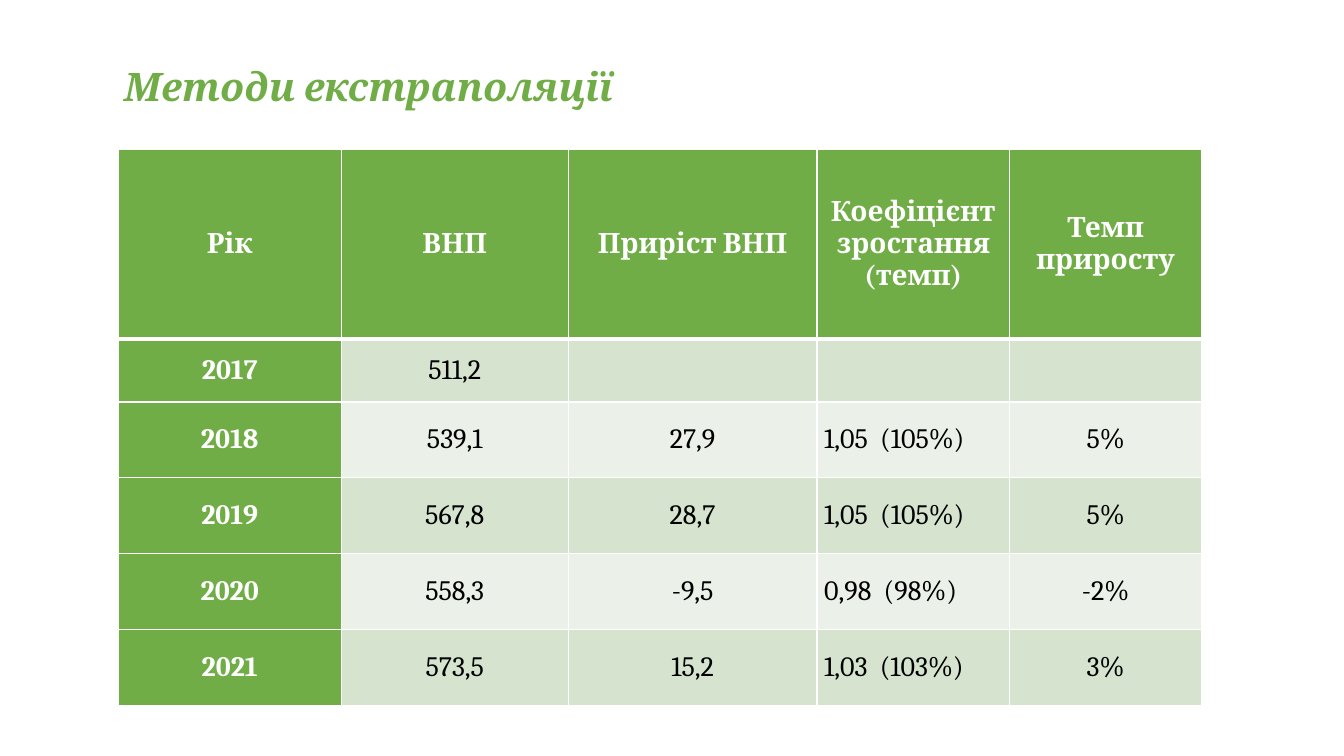
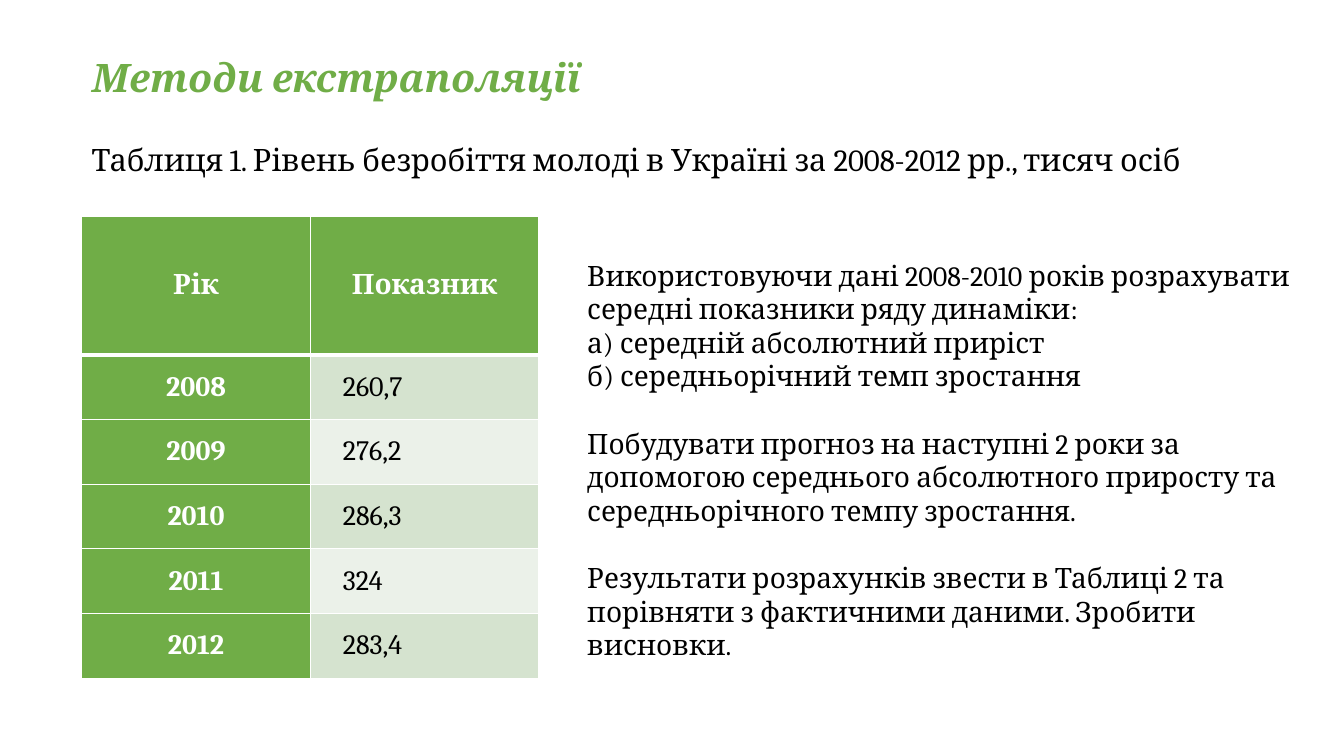
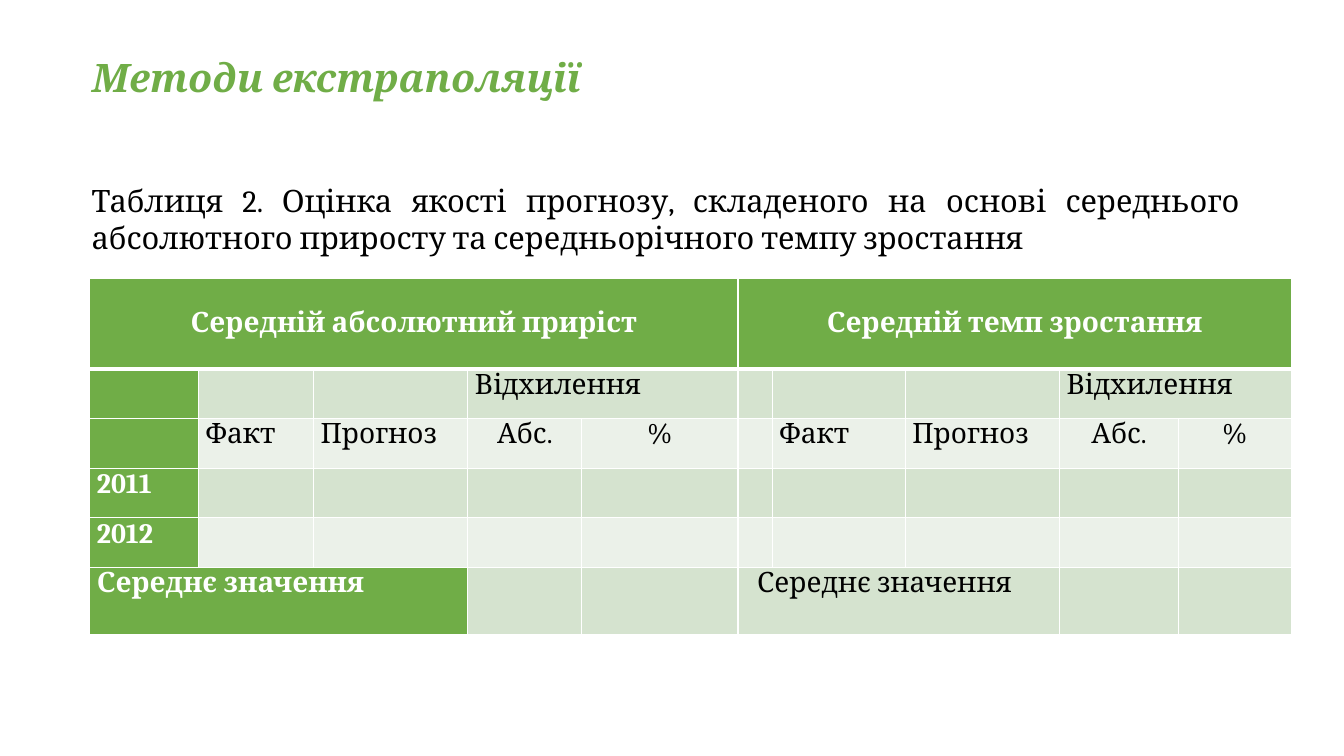
from dataclasses import dataclass, field

from lxml.etree import SubElement
from pptx import Presentation
from pptx.dml.color import RGBColor
from pptx.enum.text import MSO_ANCHOR, PP_ALIGN
from pptx.oxml.ns import qn
from pptx.slide import Slide
from pptx.table import _Cell
from pptx.text.text import _Paragraph
from pptx.util import Cm, Pt

FONT = "Cambria"
COLORS = {
    "green": "70AD47",
    "band_dark": "D5E3CF",
    "band_light": "EBF1E9",
    "white": "FFFFFF",
    "black": "000000",
}
ALIGNS = {"l": PP_ALIGN.LEFT, "c": PP_ALIGN.CENTER, "j": PP_ALIGN.JUSTIFY}
TITLE = "Методи екстраполяції"
MARGIN = 2.06
CONTENT_WIDTH = 29.44
CELL_INSET = 0.18


@dataclass
class TextBlock:
    left: float
    top: float
    width: float
    height: float
    paragraphs: list[str]
    size: int
    align: str = "l"
    gaps: dict[int, int] = field(default_factory=dict)


@dataclass
class TableBlock:
    left: float
    top: float
    widths: list[float]
    heights: list[float]
    rows: list[list[str]]
    aligns: str
    anchor: MSO_ANCHOR = MSO_ANCHOR.MIDDLE
    merges: list[tuple[int, int, int]] = field(default_factory=list)
    left_cells: set[tuple[int, int]] = field(default_factory=set)
    insets: dict[tuple[int, int], float] = field(default_factory=dict)


@dataclass
class SlideContent:
    title_left: float
    title_top: float
    table: TableBlock
    texts: list[TextBlock] = field(default_factory=list)


def rgb(name: str) -> RGBColor:
    return RGBColor.from_string(COLORS[name])


def style_paragraph(p: _Paragraph, size: int, color: str, align: str,
                    bold: bool = False, italic: bool = False) -> None:
    p.alignment = ALIGNS[align]
    p.font.name = FONT
    p.font.size = Pt(size)
    p.font.bold = bold
    p.font.italic = italic
    p.font.color.rgb = rgb(color)


def add_title(s: Slide, left: float, top: float) -> None:
    sp = s.shapes.title
    sp.left, sp.top = Cm(left), Cm(top)
    sp.width, sp.height = Cm(CONTENT_WIDTH), Cm(1.5)
    tf = sp.text_frame
    tf.text = TITLE
    tf.vertical_anchor = MSO_ANCHOR.TOP
    style_paragraph(tf.paragraphs[0], 28, "green", "l", bold=True, italic=True)


def add_text(s: Slide, block: TextBlock) -> None:
    sp = s.shapes.add_textbox(Cm(block.left), Cm(block.top), Cm(block.width), Cm(block.height))
    tf = sp.text_frame
    tf.word_wrap = True
    for i, text in enumerate(block.paragraphs):
        p = tf.paragraphs[0] if i == 0 else tf.add_paragraph()
        p.text = text
        p.space_before = Pt(block.gaps.get(i, 0))
        style_paragraph(p, block.size, "black", block.align)


def set_borders(cell: _Cell, row: int) -> None:
    widths = {"lnL": 1, "lnR": 1, "lnT": 3 if row == 1 else 1, "lnB": 3 if row == 0 else 1}
    tc_pr = cell._tc.get_or_add_tcPr()
    for i, (side, width) in enumerate(widths.items()):
        ln = SubElement(tc_pr, qn(f"a:{side}"), w=str(Pt(width)))
        tc_pr.insert(i, ln)
        fill = SubElement(ln, qn("a:solidFill"))
        SubElement(fill, qn("a:srgbClr"), val=COLORS["white"])


def add_table(s: Slide, block: TableBlock) -> None:
    frame = s.shapes.add_table(
        len(block.heights), len(block.widths), Cm(block.left), Cm(block.top),
        Cm(sum(block.widths)), Cm(sum(block.heights)))
    table = frame.table
    table.first_col = True
    for column, width in zip(table.columns, block.widths):
        column.width = Cm(width)
    for row, height in zip(table.rows, block.heights):
        row.height = Cm(height)
    for row, first, last in block.merges:
        table.cell(row, first).merge(table.cell(row, last))

    for r, texts in enumerate(block.rows):
        for c, text in enumerate(texts):
            cell = table.cell(r, c)
            is_heading = r == 0 or c == 0
            band = "band_dark" if r % 2 else "band_light"
            cell.fill.solid()
            cell.fill.fore_color.rgb = rgb("green" if is_heading else band)
            cell.vertical_anchor = MSO_ANCHOR.MIDDLE if r == 0 else block.anchor
            cell.margin_left = Cm(block.insets.get((r, c), CELL_INSET))
            cell.margin_right = Cm(CELL_INSET)
            cell.margin_top = cell.margin_bottom = 0
            set_borders(cell, r)
            if text:
                cell.text = text
                align = "c" if r == 0 else "l" if (r, c) in block.left_cells else block.aligns[c]
                style_paragraph(cell.text_frame.paragraphs[0], 20,
                                "white" if is_heading else "black", align, bold=is_heading)


GROWTH_TABLE = TableBlock(
    left=2.98, top=3.77,
    widths=[5.62, 5.72, 6.27, 4.85, 4.85],
    heights=[4.78, 1.58] + [1.91] * 4,
    rows=[
        ["Рік", "ВНП", "Приріст ВНП", "Коефіцієнт зростання (темп)", "Темп приросту"],
        ["2017", "511,2", "", "", ""],
        ["2018", "539,1", "27,9", "1,05  (105%)", "5%"],
        ["2019", "567,8", "28,7", "1,05  (105%)", "5%"],
        ["2020", "558,3", "-9,5", "0,98  (98%)", "-2%"],
        ["2021", "573,5", "15,2", "1,03  (103%)", "3%"],
    ],
    aligns="ccclc",
)

UNEMPLOYMENT_TABLE = TableBlock(
    left=MARGIN, top=5.46,
    widths=[5.76] * 2,
    heights=[3.48] + [1.63] * 5,
    rows=[
        ["Рік", "Показник"],
        ["2008", "260,7"],
        ["2009", "276,2"],
        ["2010", "286,3"],
        ["2011", "324"],
        ["2012", "283,4"],
    ],
    aligns="cl",
    insets={(r, 1): 0.82 for r in range(1, 6)},
)

FORECAST_TABLE = TableBlock(
    left=2.26, top=7.01,
    widths=[2.74, 2.9, 3.89, 2.87, 3.94, 0.86, 3.35, 3.89, 3, 2.84],
    heights=[2.29] + [1.25] * 4 + [1.68],
    rows=[
        ["Середній абсолютний приріст", "", "", "", "", "Середній темп зростання", "", "", "", ""],
        ["", "", "", "Відхилення", "", "", "", "", "Відхилення", ""],
        ["", "Факт", "Прогноз", "Абс.", "%", "", "Факт", "Прогноз", "Абс.", "%"],
        ["2011"] + [""] * 9,
        ["2012"] + [""] * 9,
        ["Середнє значення", "", "", "", "", "Середнє значення", "", "", "", ""],
    ],
    aligns="lllcclllcc",
    anchor=MSO_ANCHOR.TOP,
    merges=[(0, 0, 4), (0, 5, 9), (1, 3, 4), (1, 8, 9), (5, 0, 2), (5, 5, 7)],
    left_cells={(1, 3), (1, 8)},
    insets={(5, 5): 0.48},
)

SLIDES = [
    SlideContent(2.87, 1.45, GROWTH_TABLE),
    SlideContent(MARGIN, 1.22, UNEMPLOYMENT_TABLE, [
        TextBlock(MARGIN, 3.43, CONTENT_WIDTH, 1.2, [
            "Таблиця 1. Рівень безробіття молоді в Україні за 2008-2012 рр., тисяч осіб",
        ], 22, "j"),
        TextBlock(14.55, 6.38, 18.42, 9.65, [
            "Використовуючи дані 2008-2010 років розрахувати середні показники ряду динаміки:",
            "а) середній абсолютний приріст",
            "б) середньорічний темп зростання",
            "Побудувати прогноз на наступні 2 роки за допомогою середнього абсолютного "
            "приросту та середньорічного темпу зростання.",
            "Результати розрахунків звести в Таблиці 2 та порівняти з фактичними даними. "
            "Зробити висновки.",
        ], 20, gaps={3: 24, 4: 24}),
    ]),
    SlideContent(MARGIN, 1.22, FORECAST_TABLE, [
        TextBlock(MARGIN, 4.45, CONTENT_WIDTH, 2.15, [
            "Таблиця 2. Оцінка якості прогнозу, складеного на основі середнього "
            "абсолютного приросту та середньорічного темпу зростання",
        ], 22, "j"),
    ]),
]


def main() -> None:
    prs = Presentation()
    prs.slide_width, prs.slide_height = Cm(33.87), Cm(19.05)
    for content in SLIDES:
        s = prs.slides.add_slide(prs.slide_layouts[5])
        add_title(s, content.title_left, content.title_top)
        add_table(s, content.table)
        for block in content.texts:
            add_text(s, block)
    prs.save("out.pptx")


if __name__ == "__main__":
    main()
